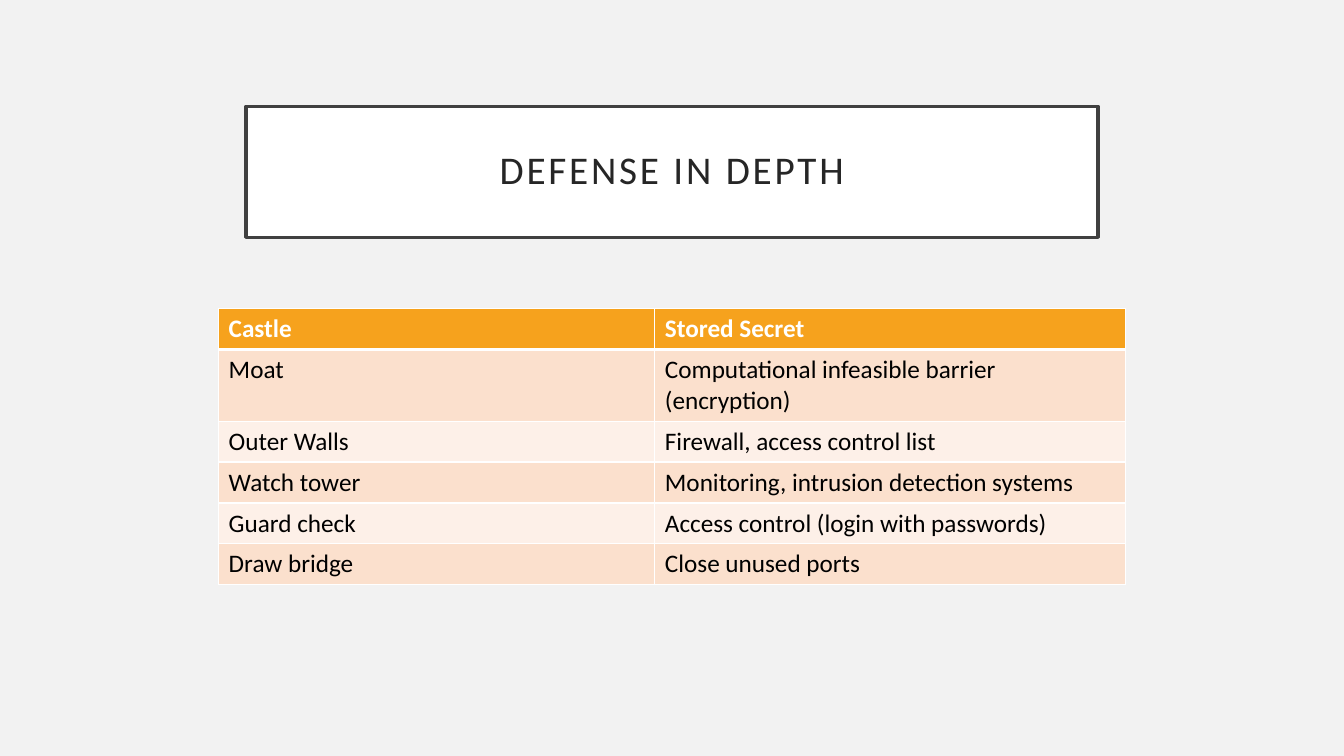
from lxml import etree
from pptx import Presentation
from pptx.dml.color import RGBColor
from pptx.enum import text
from pptx.oxml import ns
from pptx.util import Pt

COLORS = {
    "background": "F2F2F2",
    "white": "FFFFFF",
    "frame": "404040",
    "title": "262626",
    "header": "F6A21D",
    "odd_row": "FBE0CD",
    "even_row": "FDF0E8",
    "body": "000000",
}
FONT = "Calibri"
DEFENSES = [
    ("Castle", "Stored Secret"),
    ("Moat", "Computational infeasible barrier (encryption)"),
    ("Outer Walls", "Firewall, access control list"),
    ("Watch tower", "Monitoring, intrusion detection systems"),
    ("Guard check", "Access control (login with passwords)"),
    ("Draw bridge", "Close unused ports"),
]


def color(name):
    """Return the named colour as an RGB value."""
    return RGBColor.from_string(COLORS[name])


def paint(fill, name):
    """Fill with one named solid colour."""
    fill.solid()
    fill.fore_color.rgb = color(name)


def format_run(run, size, color_name, bold=False):
    """Set the font, size, colour and weight of a run."""
    run.font.name = FONT
    run.font.size = Pt(size)
    run.font.bold = bold
    run.font.color.rgb = color(color_name)


def add_title(slide, left, top, width, height):
    """Place the framed title in the given box."""
    title = slide.shapes.title
    title.left, title.top, title.width, title.height = map(Pt, (left, top, width, height))
    paint(title.fill, "white")
    title.line.color.rgb = color("frame")
    title.line.width = Pt(2.5)
    frame = title.text_frame
    frame.text = "DEFENSE IN DEPTH"
    frame.word_wrap = True
    frame.auto_size = text.MSO_AUTO_SIZE.NONE
    frame.vertical_anchor = text.MSO_ANCHOR.MIDDLE
    frame.margin_left = frame.margin_right = Pt(14.4)
    frame.margin_top = frame.margin_bottom = Pt(14.4)
    paragraph = frame.paragraphs[0]
    paragraph.alignment = text.PP_ALIGN.CENTER
    paragraph.line_spacing = 0.9
    run = paragraph.runs[0]
    format_run(run, 28, "title")
    run.font._element.set("spc", "200")


def add_borders(cell, bottom_width):
    """Draw white lines on the four sides of a cell."""
    properties = cell._tc.get_or_add_tcPr()
    for side, width in (("L", 1), ("R", 1), ("T", 1), ("B", bottom_width)):
        line = etree.SubElement(properties, ns.qn(f"a:ln{side}"), w=str(Pt(width)))
        fill = etree.SubElement(line, ns.qn("a:solidFill"))
        etree.SubElement(fill, ns.qn("a:srgbClr"), val=COLORS["white"])


def add_defense_table(slide, left, top, column_widths, row_height):
    """Place the table of castle defenses and their digital counterparts."""
    box = map(Pt, (left, top, sum(column_widths), row_height * len(DEFENSES)))
    table = slide.shapes.add_table(len(DEFENSES), len(column_widths), *box).table
    for column, width in zip(table.columns, column_widths):
        column.width = Pt(width)
    for row_index, row in enumerate(DEFENSES):
        is_header = row_index == 0
        fill_name = "header" if is_header else "odd_row" if row_index % 2 else "even_row"
        for column_index, wording in enumerate(row):
            cell = table.cell(row_index, column_index)
            cell.text_frame.text = wording
            run = cell.text_frame.paragraphs[0].runs[0]
            format_run(run, 18, "white" if is_header else "body", is_header)
            add_borders(cell, 3 if is_header else 1)
            paint(cell.fill, fill_name)


def main():
    """Build the slide and save the presentation."""
    presentation = Presentation()
    presentation.slide_width, presentation.slide_height = Pt(960), Pt(540)
    slide = presentation.slides.add_slide(presentation.slide_layouts[5])
    paint(slide.background.fill, "background")
    add_title(slide, 175.7, 75.9, 608.6, 93.6)
    add_defense_table(slide, 156.2, 220.5, (311.6, 336.4), 29.2)
    presentation.save("out.pptx")


if __name__ == "__main__":
    main()
